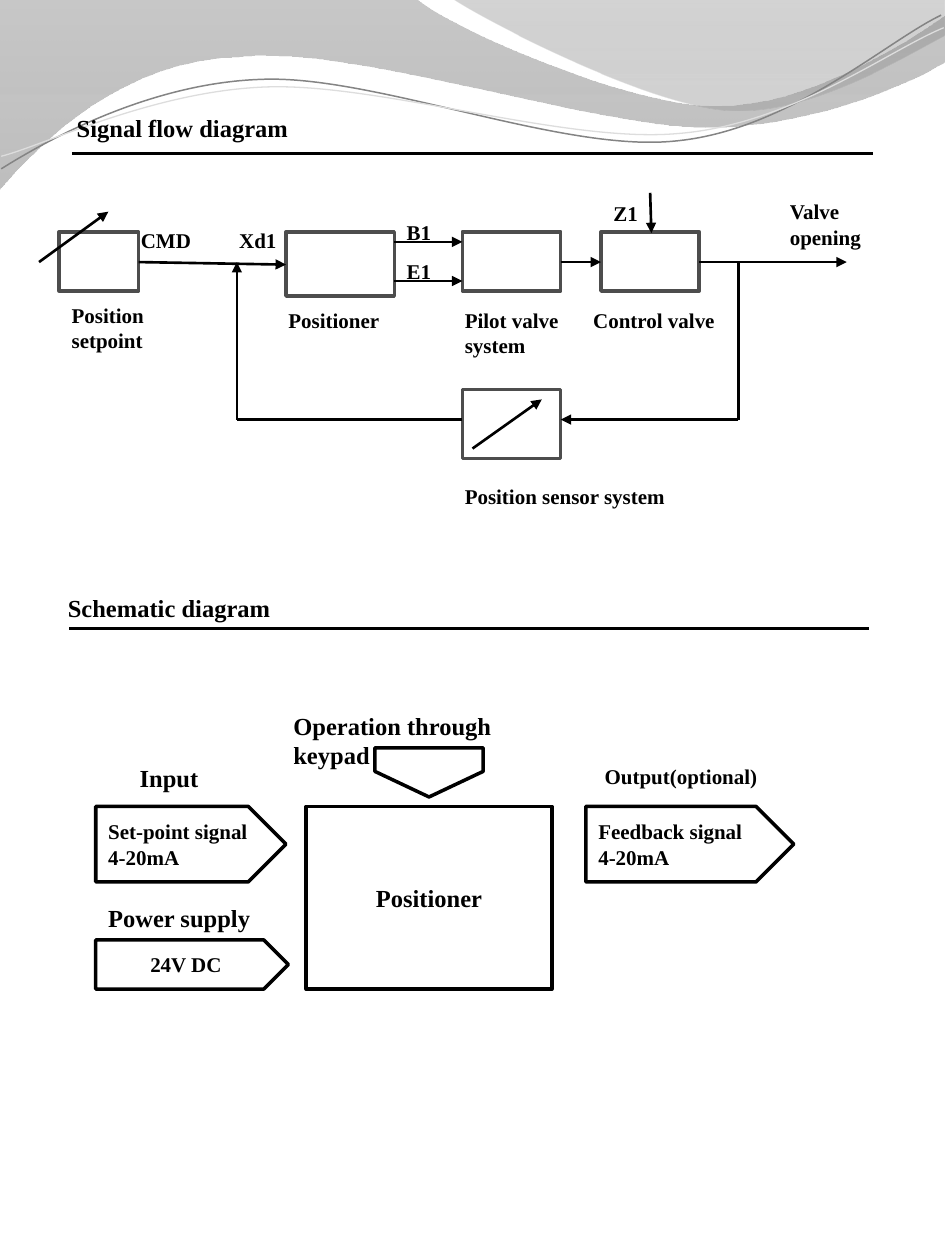
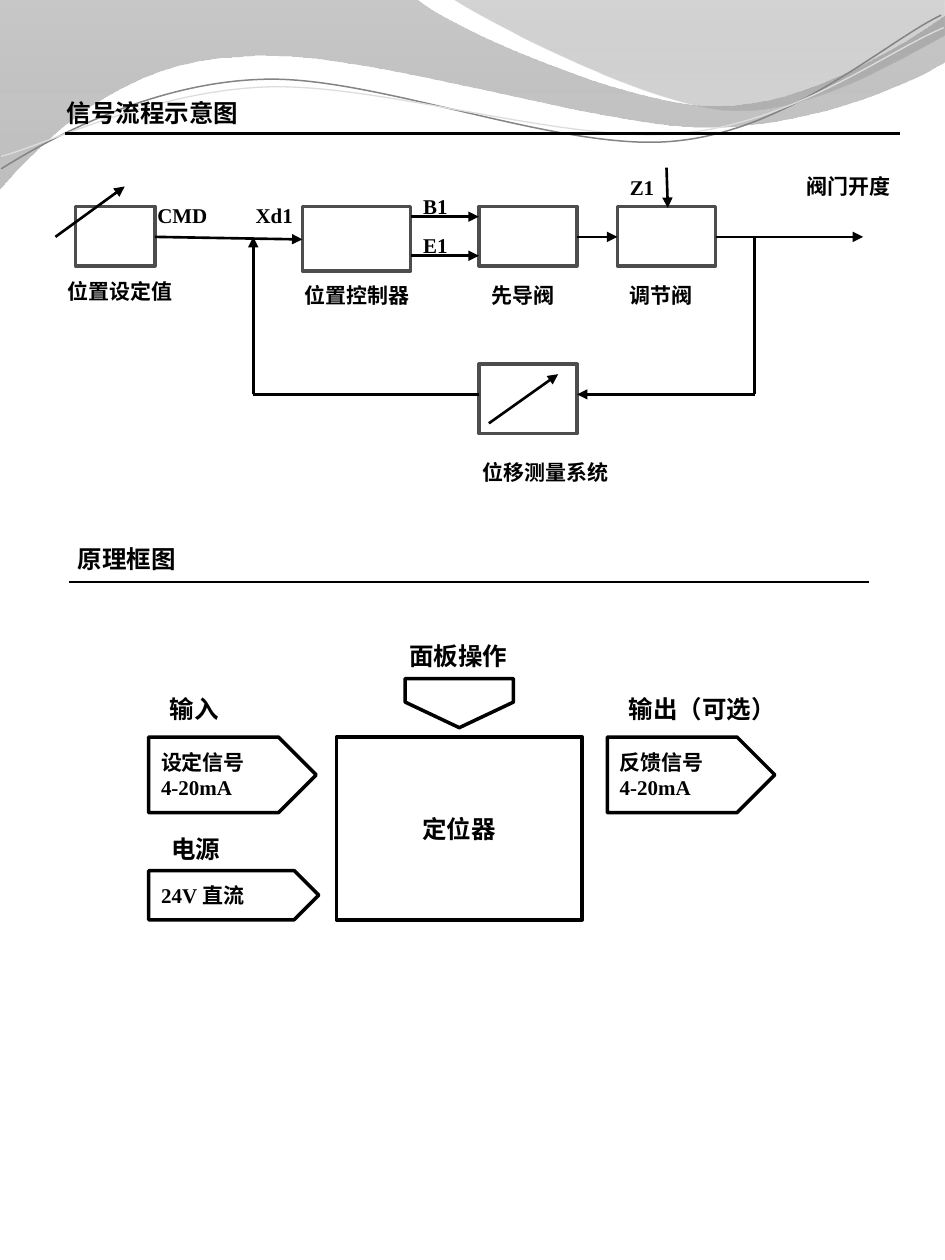
"""Build two slides, English and Chinese, showing a valve positioner's signal flow and schematic."""
from lxml.etree import SubElement
from pptx import Presentation
from pptx.dml.color import RGBColor
from pptx.enum.shapes import MSO_CONNECTOR, MSO_SHAPE
from pptx.enum.text import MSO_ANCHOR, MSO_AUTO_SIZE, PP_ALIGN
from pptx.oxml.ns import qn
from pptx.util import Inches, Pt

BLACK = RGBColor(0x00, 0x00, 0x00)
WHITE = RGBColor(0xFF, 0xFF, 0xFF)
BOX_GRAY = RGBColor(0x4D, 0x4D, 0x4D)
WAVE_GRAY = RGBColor(0x84, 0x84, 0x84)
WAVE_END = RGBColor(0x88, 0x88, 0x88)
CREST_GRAY = RGBColor(0x6F, 0x6F, 0x6F)
CREST_END = RGBColor(0x9D, 0x9D, 0x9D)
PALE_GRAY = RGBColor(0xDD, 0xDD, 0xDD)

LATIN_FONT = "Times New Roman"
CHINESE_FONT = "Noto Sans CJK SC"
HEADING_SIZE = 14
LABEL_SIZE = 12

WAVE = [[(0, -0.01)], [(3.3, -0.01)],
        [(3.57, 0.22), (4.98, 0.84), (5.69, 0.84)],
        [(6.4, 0.84), (7.19, 0.34), (7.5, 0.12)], [(7.51, 0.48)],
        [(7.38, 0.58), (6.52, 1.01), (5.59, 1.01)],
        [(4.66, 1), (2.86, 0.37), (1.93, 0.45)],
        [(0.97, 0.47), (0.34, 1.11), (-0.01, 1.51)]]
CREST = [[(3.59, -0.01)],
         [(3.82, 0.15), (5.11, 0.82), (5.77, 0.87)],
         [(6.42, 0.92), (7.21, 0.43), (7.5, 0.28)], [(7.5, 0)]]
DARK_STRAND = [[(0.01, 1.34)],
               [(0.36, 1.12), (1.18, 0.66), (2.07, 0.63)],
               [(2.96, 0.59), (4.45, 1.21), (5.35, 1.12)],
               [(6.26, 1.04), (7.03, 0.33), (7.47, 0.12)]]
PALE_STRAND = [[(0.01, 1.24)],
               [(0.36, 1.15), (1.22, 0.72), (2.12, 0.69)],
               [(3.02, 0.66), (4.49, 1.14), (5.38, 1.06)],
               [(6.28, 0.99), (7.05, 0.4), (7.49, 0.22)]]

FLOW_BOXES = [(0.47, 1.84, 0.63, 0.47), (2.27, 1.84, 0.86, 0.51),
              (3.67, 1.84, 0.78, 0.47), (4.77, 1.84, 0.78, 0.47),
              (3.67, 3.09, 0.78, 0.55)]
FLOW_ARROWS = [(0.31, 2.08, 0.86, 1.68), (1.1, 2.08, 2.27, 2.1),
               (3.13, 1.92, 3.67, 1.92), (3.13, 2.23, 3.67, 2.23),
               (4.45, 2.08, 4.77, 2.08), (5.55, 2.08, 6.72, 2.08),
               (5.16, 1.53, 5.17, 1.85), (5.86, 3.33, 4.45, 3.33),
               (1.88, 3.33, 1.88, 2.08), (3.75, 3.56, 4.3, 3.17)]
FLOW_LINES = [(5.86, 2.08, 5.86, 3.33), (3.67, 3.33, 1.88, 3.33)]
SIGNALS = [("CMD", 1.02, 1.76, 0.63), ("Xd1", 1.8, 1.76, 0.63),
           ("B1", 3.13, 1.69, 0.7), ("E1", 3.13, 2, 0.47),
           ("Z1", 4.77, 1.54, 0.47)]

ENGLISH = {
    "headings": [("Signal flow diagram", 0.51, 0.85, 2.42, (0.57, 1.22, 6.93)),
                 ("Schematic diagram", 0.44, 4.66, 2.68, (0.55, 4.99, 6.9))],
    "heading_font": LATIN_FONT,
    "flow_offset": (0, 0),
    "flow_labels": [("Valve opening", 6.17, 1.53, 1.02),
                    ("Position setpoint", 0.47, 2.35, 1.02),
                    ("Positioner", 2.19, 2.39, 1.09),
                    ("Pilot valve system", 3.59, 2.39, 1.02),
                    ("Control valve", 4.61, 2.39, 1.25),
                    ("Position sensor system", 3.59, 3.79, 1.95)],
    "positioner": ("Positioner", 2.43, 6.4),
    "plates": [(["Set-point signal", "4-20mA"], 0.76, 0, 1.51, 0.6, PP_ALIGN.LEFT),
               (["24V DC"], 0.76, 1.06, 1.53, 0.39, PP_ALIGN.CENTER),
               (["Feedback signal", "4-20mA"], 4.65, 0, 1.65, 0.6, PP_ALIGN.LEFT)],
    "captions": [("Input", 1.01, -0.39, 0.67, HEADING_SIZE),
                 ("Operation through keypad", 2.23, -0.81, 2.2, HEADING_SIZE),
                 ("Power supply", 0.76, 0.72, 1.36, HEADING_SIZE),
                 ("Output(optional)", 4.7, -0.39, 1.41, LABEL_SIZE)],
}
CHINESE = {
    "headings": [("信号流程示意图", 0.43, 0.73, 2.11, (0.52, 1.06, 7.14)),
                 ("原理框图", 0.52, 4.27, 2.2, (0.55, 4.62, 6.9))],
    "heading_font": CHINESE_FONT,
    "flow_offset": (0.13, -0.2),
    "flow_labels": [("阀门开度", 6.3, 1.33, 1.02),
                    ("位置设定值", 0.44, 2.16, 1.17),
                    ("位置控制器", 2.32, 2.19, 1.17),
                    ("先导阀", 3.8, 2.19, 1.02),
                    ("调节阀", 4.9, 2.19, 1.25),
                    ("位移测量系统", 3.73, 3.6, 1.95)],
    "positioner": ("定位器", 2.67, 5.85),
    "plates": [(["设定信号", "4-20mA"], 1.18, 0, 1.33, 0.6, PP_ALIGN.LEFT),
               (["24V 直流"], 1.18, 1.06, 1.35, 0.39, PP_ALIGN.LEFT),
               (["反馈信号", "4-20mA"], 4.82, 0, 1.33, 0.6, PP_ALIGN.LEFT)],
    "captions": [("输入", 1.25, -0.39, 0.59, HEADING_SIZE),
                 ("面板操作", 3.15, -0.81, 0.99, HEADING_SIZE),
                 ("电源", 1.26, 0.72, 0.59, HEADING_SIZE),
                 ("输出（可选）", 4.89, -0.39, 1.38, HEADING_SIZE)],
}


def apply_format(target, values):
    """Set each named attribute of the target."""
    for name, value in values.items():
        setattr(target, name, value)


def write_text(frame, lines, size, font_name=LATIN_FONT, alignment=PP_ALIGN.LEFT):
    """Fill a text frame with bold black paragraphs."""
    for index, line in enumerate(lines):
        paragraph = frame.add_paragraph() if index else frame.paragraphs[0]
        paragraph.alignment = alignment
        run = paragraph.add_run()
        run.text = line
        apply_format(run.font, {"name": font_name, "size": Pt(size), "bold": True})
        run.font.color.rgb = BLACK


def add_label(slide, text, left, top, width, size=LABEL_SIZE, font_name=LATIN_FONT):
    """Add a wrapping text box that grows with its text."""
    height = 0.34 if size == HEADING_SIZE else 0.3
    box = slide.shapes.add_textbox(Inches(left), Inches(top), Inches(width), Inches(height))
    apply_format(box.text_frame, {"word_wrap": True, "auto_size": MSO_AUTO_SIZE.SHAPE_TO_FIT_TEXT})
    write_text(box.text_frame, [text], size, font_name)


def set_outline(shape, color, width):
    """Give a shape or connector a solid line."""
    shape.line.color.rgb = color
    shape.line.width = Pt(width)


def add_box(slide, kind, left, top, width, height, color=BLACK):
    """Add a white preset shape with an outline and no shadow."""
    shape = slide.shapes.add_shape(kind, Inches(left), Inches(top), Inches(width), Inches(height))
    shape.shadow.inherit = False
    shape.fill.solid()
    shape.fill.fore_color.rgb = WHITE
    set_outline(shape, color, 2)
    shape.text_frame.vertical_anchor = MSO_ANCHOR.MIDDLE
    return shape


def add_line(slide, start_x, start_y, end_x, end_y, arrow=False):
    """Add a straight black connector, with an arrowhead at its end if asked."""
    points = [Inches(value) for value in (start_x, start_y, end_x, end_y)]
    connector = slide.shapes.add_connector(MSO_CONNECTOR.STRAIGHT, *points)
    set_outline(connector, BLACK, 1.5)
    properties = connector.element.spPr
    if arrow:
        SubElement(properties.find(qn("a:ln")), qn("a:tailEnd"), type="triangle")
    SubElement(properties, qn("a:effectLst"))


def add_outline(slide, outline, closed):
    """Add a freeform whose three-point segments are cubic curves."""
    points = [(Inches(x), Inches(y)) for segment in outline for x, y in segment]
    builder = slide.shapes.build_freeform(*points[0])
    builder.add_line_segments(points[1:], close=closed)
    shape = builder.convert_to_shape()
    shape.shadow.inherit = False
    steps = iter(list(shape.element.spPr.iter(qn("a:lnTo"))))
    for segment in outline[1:]:
        first, *others = [next(steps) for _ in segment]
        if others:
            first.tag = qn("a:cubicBezTo")
        for step in others:
            first.append(step[0])
            step.getparent().remove(step)
    return shape


def add_band(slide, outline, stops):
    """Add a closed area with a vertical, partly transparent gradient."""
    shape = add_outline(slide, outline, True)
    shape.line.fill.background()
    shape.fill.gradient()
    shape.fill.gradient_angle = 270
    for stop, (position, color, _) in zip(shape.fill.gradient_stops, stops):
        stop.position = position
        stop.color.rgb = color
    for node, (_, _, opacity) in zip(shape.element.spPr.iter(qn("a:srgbClr")), stops):
        SubElement(node, qn("a:alpha"), val=str(opacity * 1000))
    return shape


def add_strand(slide, outline, color, width):
    """Add an open curved line."""
    shape = add_outline(slide, outline, False)
    shape.fill.background()
    set_outline(shape, color, width)
    return shape


def decorate_layout(layout, slide):
    """Draw the header waves once and move them to the shared layout."""
    for placeholder in list(layout.placeholders):
        layout.shapes.element.remove(placeholder.element)
    waves = [
        add_band(slide, WAVE, [(0, WAVE_GRAY, 45), (1, WAVE_END, 55)]),
        add_band(slide, CREST, [(0, CREST_GRAY, 30), (0.8, CREST_END, 45)]),
        add_strand(slide, DARK_STRAND, WAVE_GRAY, 0.85),
        add_strand(slide, PALE_STRAND, PALE_GRAY, 0.75),
    ]
    for wave in waves:
        layout.shapes.element.append(wave.element)


def add_headings(slide, content):
    """Add the section headings and the rules below them."""
    for text, left, top, width, (rule_left, rule_top, rule_right) in content["headings"]:
        add_label(slide, text, left, top, width, HEADING_SIZE, content["heading_font"])
        add_line(slide, rule_left, rule_top, rule_right, rule_top)


def add_signal_flow(slide, content):
    """Draw the control loop, shifted by the slide's offset."""
    shift_x, shift_y = content["flow_offset"]
    for left, top, width, height in FLOW_BOXES:
        add_box(slide, MSO_SHAPE.RECTANGLE, left + shift_x, top + shift_y, width, height, BOX_GRAY)
    for lines, arrow in ((FLOW_ARROWS, True), (FLOW_LINES, False)):
        for start_x, start_y, end_x, end_y in lines:
            add_line(slide, start_x + shift_x, start_y + shift_y,
                     end_x + shift_x, end_y + shift_y, arrow)
    for text, left, top, width in SIGNALS:
        add_label(slide, text, left + shift_x, top + shift_y, width)
    for label in content["flow_labels"]:
        add_label(slide, *label)


def add_schematic(slide, content):
    """Draw the positioner with its inputs, outputs and captions."""
    name, left, top = content["positioner"]
    positioner = add_box(slide, MSO_SHAPE.RECTANGLE, left, top, 1.95, 1.45)
    write_text(positioner.text_frame, [name], HEADING_SIZE, alignment=PP_ALIGN.CENTER)
    for lines, plate_left, drop, width, height, alignment in content["plates"]:
        plate = add_box(slide, MSO_SHAPE.PENTAGON, plate_left, top + drop, width, height)
        write_text(plate.text_frame, lines, LABEL_SIZE, alignment=alignment)
    for text, caption_left, drop, width, size in content["captions"]:
        add_label(slide, text, caption_left, top + drop, width, size)
    keypad = add_box(slide, MSO_SHAPE.PENTAGON, left + 0.78, top - 0.7, 0.39, 0.86)
    keypad.rotation = 90
    keypad.adjustments[0] = 0.52


def main():
    """Build and save the presentation."""
    presentation = Presentation()
    apply_format(presentation, {"slide_width": Inches(7.5), "slide_height": Inches(10)})
    layout = presentation.slide_layouts[6]
    for index, content in enumerate((ENGLISH, CHINESE)):
        slide = presentation.slides.add_slide(layout)
        if index == 0:
            decorate_layout(layout, slide)
        add_headings(slide, content)
        add_signal_flow(slide, content)
        add_schematic(slide, content)
    presentation.save("out.pptx")


if __name__ == "__main__":
    main()
